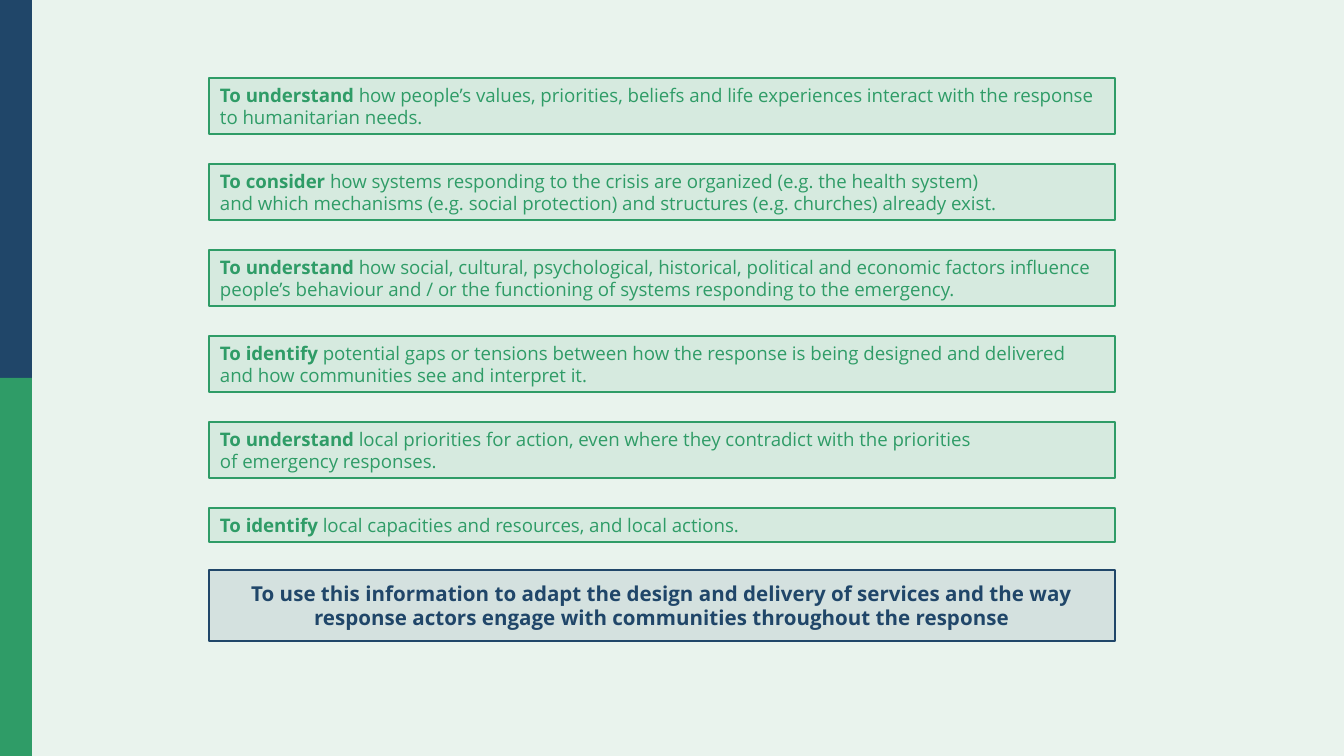
from lxml import etree
from pptx import Presentation
from pptx.dml.color import RGBColor
from pptx.enum.shapes import MSO_SHAPE
from pptx.enum.text import MSO_ANCHOR, MSO_AUTO_SIZE, PP_ALIGN
from pptx.oxml.ns import qn
from pptx.util import Emu, Pt

RECTANGLE = MSO_SHAPE.RECTANGLE
MIDDLE = MSO_ANCHOR.MIDDLE
GROW = MSO_AUTO_SIZE.SHAPE_TO_FIT_TEXT
LEFT, CENTER = PP_ALIGN.LEFT, PP_ALIGN.CENTER

PX_PER_INCH = 134.4
COLORS = {"green": "2F9C67", "navy": "204669", "page": "E9F3ED"}


def px(length):
    return Emu(round(length * 914400 / PX_PER_INCH))


class Page:
    font_name = "Open Sans"
    tint_percent = 10

    def __init__(self, deck):
        self.slide = deck.slides.add_slide(deck.slide_layouts[6])
        fill = self.slide.background.fill
        fill.solid()
        fill.fore_color.rgb = self.color("page")

    def color(self, name):
        return RGBColor.from_string(COLORS[name])

    def bar(self, left, top, width, height, color):
        shape = self.slide.shapes.add_shape(
            RECTANGLE, px(left), px(top), px(width), px(height))
        shape.shadow.inherit = False
        shape.fill.solid()
        shape.fill.fore_color.rgb = self.color(color)
        shape.line.fill.background()
        return shape

    def box(self, left, top, width, height, color, margins):
        """Tinted, outlined rectangle; margins run left, top, right, bottom."""
        shape = self.bar(left, top, width, height, color)
        tint = shape.fill._xPr.find(qn("a:solidFill"))[0]
        etree.SubElement(tint, qn("a:alpha"), val=str(self.tint_percent * 1000))
        shape.line.color.rgb = self.color(color)
        shape.line.width = Pt(0)
        frame = shape.text_frame
        settings = {"word_wrap": True, "auto_size": GROW, "vertical_anchor": MIDDLE}
        sides = ("margin_left", "margin_top", "margin_right", "margin_bottom")
        settings.update(zip(sides, map(px, margins)))
        for name, value in settings.items():
            setattr(frame, name, value)
        return frame

    def paragraph(self, frame, spans, color, size, align=LEFT, first=True):
        """Each span is (text, bold); a newline in it is a line break."""
        paragraph = frame.paragraphs[0] if first else frame.add_paragraph()
        paragraph.alignment = align
        for text, bold in spans:
            for number, line in enumerate(text.split("\n")):
                if number:
                    paragraph.add_line_break()
                span = paragraph.add_run()
                span.text = line
                span.font.color.rgb = self.color(color)
                style = {"name": self.font_name, "size": Pt(size), "bold": bold}
                for name, value in style.items():
                    setattr(span.font, name, value)


# Each aim: bold opening, then its paragraphs
AIMS = [
    ("To understand ", [
        "how people’s values, priorities, beliefs and life experiences interact with the response",
        "to humanitarian needs."]),
    ("To consider ", [
        "how systems responding to the crisis are organized (e.g. the health system)\n"
        "and which mechanisms (e.g. social protection) and structures (e.g. churches) "
        "already exist."]),
    ("To understand ", [
        "how social, cultural, psychological, historical, political and economic factors "
        "influence people’s behaviour and / or the functioning of systems responding "
        "to the emergency."]),
    ("To identify ", [
        "potential gaps or tensions between how the response is being designed and delivered\n"
        "and how communities see and interpret it."]),
    ("To understand ", [
        "local priorities for action, even where they contradict with the priorities\n"
        "of emergency responses."]),
    ("To identify ", ["local capacities and resources, and local actions."]),
]
CLOSING = ("To use this information to adapt the design and delivery of services and the way\n"
           "response actors engage with communities throughout the response")

PAGE_WIDTH, PAGE_HEIGHT = 1344, 756
BAR_WIDTH, BAR_HEIGHT = 32, PAGE_HEIGHT // 2
BOX_LEFT, BOX_WIDTH = 209, 906
FIRST_TOP, STEP = 78, 86
TALL, SHORT = 56, 34


def main():
    deck = Presentation()
    deck.slide_width, deck.slide_height = px(PAGE_WIDTH), px(PAGE_HEIGHT)
    page = Page(deck)

    # Side bars
    for row, color in enumerate(("navy", "green")):
        page.bar(0, row * BAR_HEIGHT, BAR_WIDTH, BAR_HEIGHT, color)

    # Aims
    for row, (opening, paragraphs) in enumerate(AIMS):
        height = SHORT if row == len(AIMS) - 1 else TALL
        frame = page.box(BOX_LEFT, FIRST_TOP + row * STEP, BOX_WIDTH, height,
                         "green", (11, 5, 5, 5))
        page.paragraph(frame, [(opening, True), (paragraphs[0], False)], "green", 10)
        for text in paragraphs[1:]:
            page.paragraph(frame, [(text, False)], "green", 10, first=False)

    # Closing statement
    frame = page.box(BOX_LEFT, 570, BOX_WIDTH, 71, "navy", (11, 11, 11, 11))
    page.paragraph(frame, [(CLOSING, True)], "navy", 11, CENTER)

    deck.save("out.pptx")


if __name__ == "__main__":
    main()
